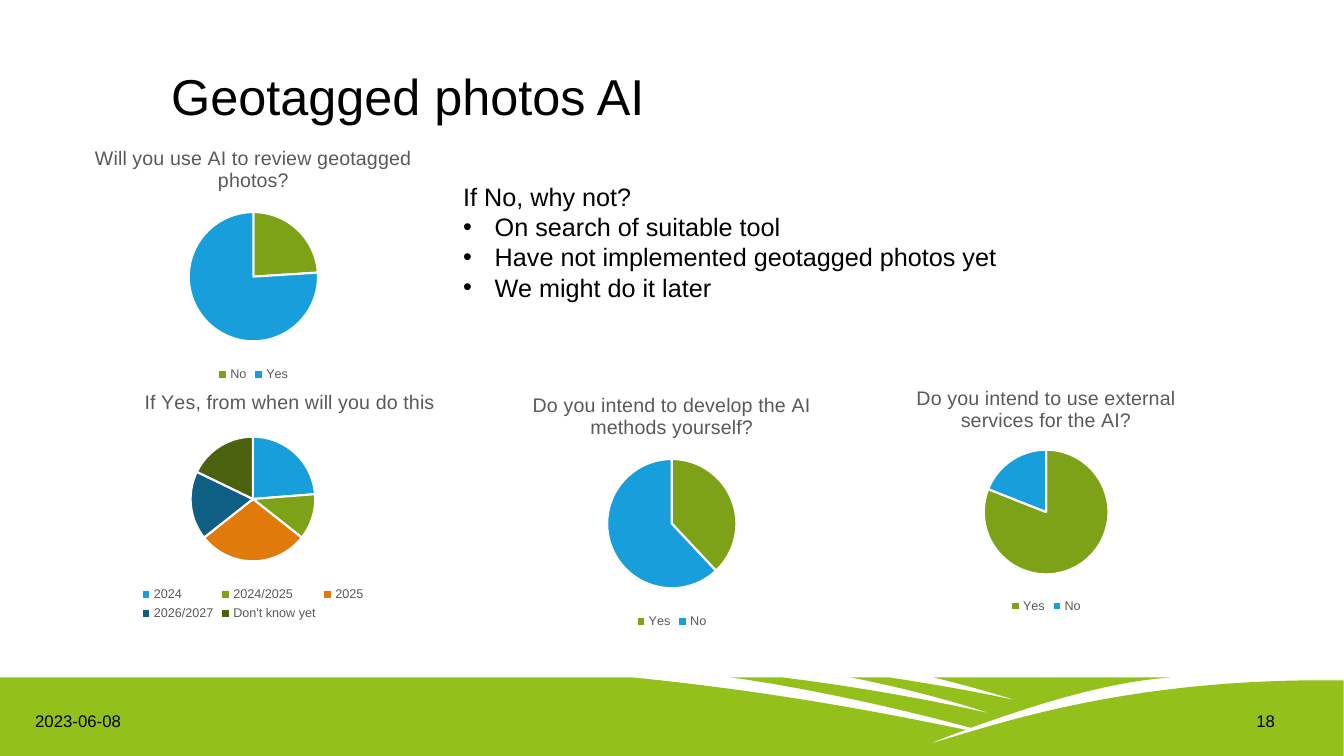
from dataclasses import dataclass

from lxml import etree
from pptx import Presentation
from pptx import util as u
from pptx.chart import data as chart_data
from pptx.dml import color
from pptx.enum import chart as ch, text
from pptx.oxml import ns

FONT = "Arial"
BLUE, GREEN, ORANGE, NAVY, OLIVE = "179EDB", "7DA117", "E07A0A", "0E5F83", "4B610E"
GREY, BLACK, WHITE, FIELD = "595959", "000000", "FFFFFF", "93C01B"

# Outlines in hundredths of an inch: pairs are points, sixes are Bezier curves
HORIZON = 672
FURROWS = [
    (926, 672), (955, 679, 980, 686, 1009, 695), (1009, 695, 961, 684, 882, 672),
    (844, 672), (889, 681, 938, 693, 983, 708), (983, 708, 896, 687, 776, 672),
    (725, 672), (791, 681, 882, 700, 963, 722), (1014, 704, 1091, 677, 1162, 672),
]
GROUND = [
    (958, 724), (918, 716, 789, 688, 627, 672), (0, 672), (0, 750), (1333, 750),
    (1333, 675), (1119, 672, 991, 718, 922, 738), (941, 730, 945, 729, 958, 724),
]


@dataclass
class Label:
    box: tuple[float, float, float, float]
    lines: list[str]
    size: float
    anchor: text.MSO_ANCHOR = text.MSO_ANCHOR.MIDDLE
    align: text.PP_ALIGN = text.PP_ALIGN.LEFT
    line_spacing: float | None = None


@dataclass
class Pie:
    box: tuple[float, float, float, float]
    title: str
    slices: list[tuple[str, float, str]]
    pie_top: float = 0.318
    title_at: tuple[float, float] | None = None


LABELS = [
    Label((115.2, 0, 737.3, 93.8), ["Geotagged photos AI"], 36,
          text.MSO_ANCHOR.BOTTOM, line_spacing=0.9),
    Label((0, 500.4, 111.6, 28.8), ["2023-06-08"], 12, align=text.PP_ALIGN.CENTER),
    Label((848.2, 500.4, 111.6, 28.8), ["18"], 12, align=text.PP_ALIGN.CENTER),
    Label((323.8, 125.8, 423.4, 94.3),
          ["If No, why not?", "On search of suitable tool",
           "Have not implemented geotagged photos yet", "We might do it later"],
          18, text.MSO_ANCHOR.TOP),
]
PIES = [
    Pie((35.6, 93.6, 290.9, 182.2), "Will you use AI to review geotagged photos?",
        [("No", 24, GREEN), ("Yes", 76, BLUE)]),
    Pie((27, 270.5, 307.4, 175.7), "If Yes, from when will you do this",
        [("2024", 24, BLUE), ("2024/2025", 12, GREEN), ("2025", 29, ORANGE),
         ("2026/2027", 18, NAVY), ("Don't know yet", 18, OLIVE)], 0.236, (0.24, 0.03)),
    Pie((349.9, 270, 259.9, 182.2), "Do you intend to develop the AI methods yourself?",
        [("Yes", 38, GREEN), ("No", 62, BLUE)]),
    Pie((609.8, 265.4, 275, 175.7), "Do you intend to use external services for the AI?",
        [("Yes", 81, GREEN), ("No", 19, BLUE)]),
]


def rgb(value: str) -> color.RGBColor:
    return color.RGBColor.from_string(value)


def set_font(font, size: float, value: str) -> None:
    for name, setting in {"name": FONT, "size": u.Pt(size), "bold": False}.items():
        setattr(font, name, setting)
    font.color.rgb = rgb(value)


def bend(line, curve: tuple) -> None:
    """Replace a straight segment of an outline by a cubic curve."""
    cubic = etree.Element(ns.qn("a:cubicBezTo"))
    for x, y in zip(curve[::2], curve[1::2]):
        point = etree.SubElement(cubic, ns.qn("a:pt"))
        point.set("x", str(x))
        point.set("y", str(y - HORIZON))
    line.getparent().replace(line, cubic)


def add_landscape(page) -> None:
    builder = page.shapes.build_freeform(*FURROWS[0], scale=u.Pt(0.72))
    builder.add_line_segments([segment[-2:] for segment in FURROWS[1:]], close=True)
    builder.move_to(*GROUND[0])
    builder.add_line_segments([segment[-2:] for segment in GROUND[1:]], close=True)
    landscape = builder.convert_to_shape()
    lines = list(landscape.element.iter(ns.qn("a:lnTo")))
    for line, segment in zip(lines, FURROWS[1:] + GROUND[1:]):
        if len(segment) == 6:
            bend(line, segment)
    landscape.shadow.inherit = False
    landscape.fill.solid()
    landscape.fill.fore_color.rgb = rgb(FIELD)
    landscape.line.fill.background()


def add_bullet(para) -> None:
    properties = para._p.get_or_add_pPr()
    properties.set("marL", str(u.Pt(22.5)))
    properties.set("indent", str(-u.Pt(22.5)))
    etree.SubElement(properties, ns.qn("a:buFont")).set("typeface", FONT)
    etree.SubElement(properties, ns.qn("a:buChar")).set("char", "•")


def add_label(page, label: Label) -> None:
    frame = page.shapes.add_textbox(*map(u.Pt, label.box)).text_frame
    frame.word_wrap = True
    frame.vertical_anchor = label.anchor
    for number, line in enumerate(label.lines):
        para = frame.add_paragraph() if number else frame.paragraphs[0]
        para.alignment = label.align
        para.line_spacing = label.line_spacing
        if number:
            add_bullet(para)
        span = para.add_run()
        span.text = line
        set_font(span.font, label.size, BLACK)


def set_layout(parent, index: int, values: dict[str, object]) -> None:
    """Give a chart part a manual layout, as fractions of the chart."""
    for old in parent.findall(ns.qn("c:layout")):
        parent.remove(old)
    layout = etree.Element(ns.qn("c:layout"))
    manual = etree.SubElement(layout, ns.qn("c:manualLayout"))
    for name, value in values.items():
        etree.SubElement(manual, ns.qn(f"c:{name}")).set("val", str(value))
    parent.insert(index, layout)


def add_pie(page, pie: Pie) -> None:
    values = chart_data.CategoryChartData()
    values.categories = [name for name, _, _ in pie.slices]
    values.add_series("Series 1", [value for _, value, _ in pie.slices])
    chart = page.shapes.add_chart(
        ch.XL_CHART_TYPE.PIE, *map(u.Pt, pie.box), values).chart
    set_font(chart.font, 10, BLACK)

    chart.has_title = True
    span = chart.chart_title.text_frame.paragraphs[0].add_run()
    span.text = pie.title
    set_font(span.font, 14, GREY)
    chart.chart_title.include_in_layout = False
    if pie.title_at:
        x, y = pie.title_at
        set_layout(chart.chart_title.element, 1,
                   {"xMode": "edge", "yMode": "edge", "x": x, "y": y})

    chart.has_legend = True
    chart.legend.position = ch.XL_LEGEND_POSITION.BOTTOM
    chart.legend.include_in_layout = False
    set_font(chart.legend.font, 9, GREY)

    plot = chart.plots[0]
    plot.vary_by_categories = True
    for number, (_, _, fill) in enumerate(pie.slices):
        style = plot.series[0].points[number].format
        style.fill.solid()
        style.fill.fore_color.rgb = rgb(fill)
        style.line.color.rgb = rgb(WHITE)
        style.line.width = u.Pt(1.5)

    height = 0.507
    width = height * pie.box[3] / pie.box[2]
    set_layout(chart.element.find(".//" + ns.qn("c:plotArea")), 0, {
        "layoutTarget": "inner", "xMode": "edge", "yMode": "edge",
        "x": (1 - width) / 2, "y": pie.pie_top, "w": width, "h": height})


def main() -> None:
    deck = Presentation()
    deck.slide_width, deck.slide_height = u.Pt(960), u.Pt(540)
    page = deck.slides.add_slide(deck.slide_layouts[6])
    add_landscape(page)
    for label in LABELS:
        add_label(page, label)
    for pie in PIES:
        add_pie(page, pie)
    deck.save("out.pptx")


if __name__ == "__main__":
    main()
